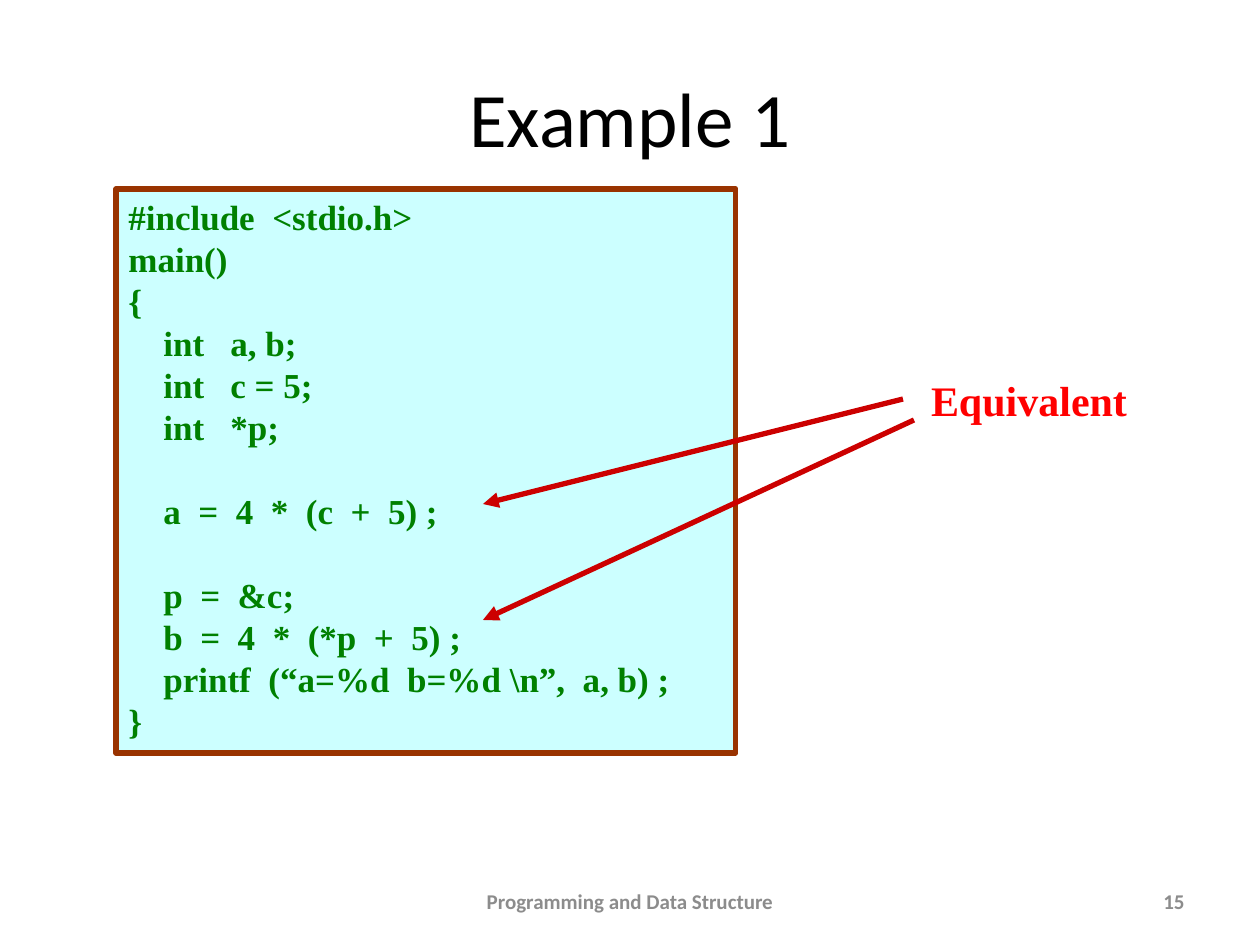
from dataclasses import dataclass

from lxml import etree
from pptx import Presentation
from pptx.dml.color import RGBColor
from pptx.enum import shapes, text
from pptx.oxml import ns
from pptx.util import Pt

SCALE = 914400 / 126  # EMU in one px


@dataclass(frozen=True)
class Theme:
    sans: str = "Calibri"
    serif: str = "Times New Roman"
    black: str = "000000"
    grey: str = "8C8C8C"
    green: str = "008000"
    red: str = "FF0000"
    arrow: str = "CC0000"
    fill: str = "CCFFFF"
    frame: str = "993300"
    line: int = 3
    title: int = 44
    label: int = 24
    code: int = 20
    foot: int = 12


LOOK = Theme()
ALIGN = text.PP_ALIGN
ANCHOR = text.MSO_ANCHOR

# Each line of code: indent level, blank lines above, text
CODE = [
    (0, 0, "#include  <stdio.h>"),
    (0, 0, "main()"),
    (0, 0, "{"),
    (1, 0, "int   a, b;"),
    (1, 0, "int   c = 5;"),
    (1, 0, "int   *p;"),
    (1, 1, "a  =  4  *  (c  +  5) ;"),
    (1, 1, "p  =  &c;"),
    (1, 0, "b  =  4  *  (*p  +  5) ;"),
    (1, 0, "printf  (“a=%d  b=%d \\n”,  a, b) ;"),
    (0, 0, "}"),
]


def px(*sizes):
    return [round(size * SCALE) for size in sizes]


def style(para, color, align=ALIGN.LEFT, **font):
    para.alignment = align
    para.font.color.rgb = RGBColor.from_string(color)
    for key, value in font.items():
        setattr(para.font, key, value)


def stroke(line, color):
    line.color.rgb = RGBColor.from_string(color)
    line.width = Pt(LOOK.line)


def write(parts, box, words, color, align, anchor=ANCHOR.MIDDLE, **font):
    frame = parts.add_textbox(*px(*box)).text_frame
    frame.word_wrap = True
    frame.vertical_anchor = anchor
    frame.text = words
    style(frame.paragraphs[0], color, align, **font)


def head(slide, box):
    write(slide.shapes, box, "Example 1", LOOK.black, ALIGN.CENTER,
          name=LOOK.sans, size=Pt(LOOK.title))


def listing(slide, box):
    panel = slide.shapes.add_shape(shapes.MSO_SHAPE.RECTANGLE, *px(*box))
    panel.shadow.inherit = False
    panel.fill.solid()
    panel.fill.fore_color.rgb = RGBColor.from_string(LOOK.fill)
    stroke(panel.line, LOOK.frame)
    frame = panel.text_frame
    frame.word_wrap = True
    frame.vertical_anchor = ANCHOR.TOP
    for row, (level, gap, words) in enumerate(CODE):
        para = frame.add_paragraph() if row else frame.paragraphs[0]
        para.text = words
        style(para, LOOK.green, name=LOOK.serif, size=Pt(LOOK.code), bold=True)
        para.space_before = Pt(gap * LOOK.code * 1.2)
        para._p.get_or_add_pPr().set("marL", str(Pt(level * LOOK.code)))


def arrow(parts, start, end):
    link = parts.add_connector(shapes.MSO_CONNECTOR.STRAIGHT, *px(*start, *end))
    stroke(link.line, LOOK.arrow)
    tip = etree.SubElement(link.line._get_or_add_ln(), ns.qn("a:tailEnd"))
    tip.set("type", "triangle")
    etree.SubElement(link._element.spPr, ns.qn("a:effectLst"))


def callout(slide, box):
    left, top, width, height = box
    parts = slide.shapes.add_group_shape().shapes
    # Label on the right, arrows ending on the left edge
    write(parts, (left + 399, top, width - 399, 63), "Equivalent",
          LOOK.red, ALIGN.CENTER, ANCHOR.TOP,
          name=LOOK.serif, size=Pt(LOOK.label), bold=True)
    for x, y, drop in ((420, 31, 136), (431, 52, height)):
        arrow(parts, (left + x, top + y), (left, top + drop))


def foot(slide, box):
    left, top, width, height = box
    font = dict(name=LOOK.sans, size=Pt(LOOK.foot), bold=True)
    write(slide.shapes, (left + 368, top, width - 736, height),
          "Programming and Data Structure", LOOK.grey, ALIGN.CENTER, **font)
    write(slide.shapes, (left + width - 294, top, 294, height),
          "15", LOOK.grey, ALIGN.RIGHT, **font)


def main():
    deck = Presentation()
    deck.slide_width, deck.slide_height = px(1260, 945)
    slide = deck.slides.add_slide(deck.slide_layouts[6])
    head(slide, (63, 38, 1134, 158))
    foot(slide, (63, 876, 1134, 50))
    listing(slide, (116, 189, 620, 564))
    callout(slide, (483, 368, 693, 252))
    deck.save("out.pptx")


if __name__ == "__main__":
    main()
